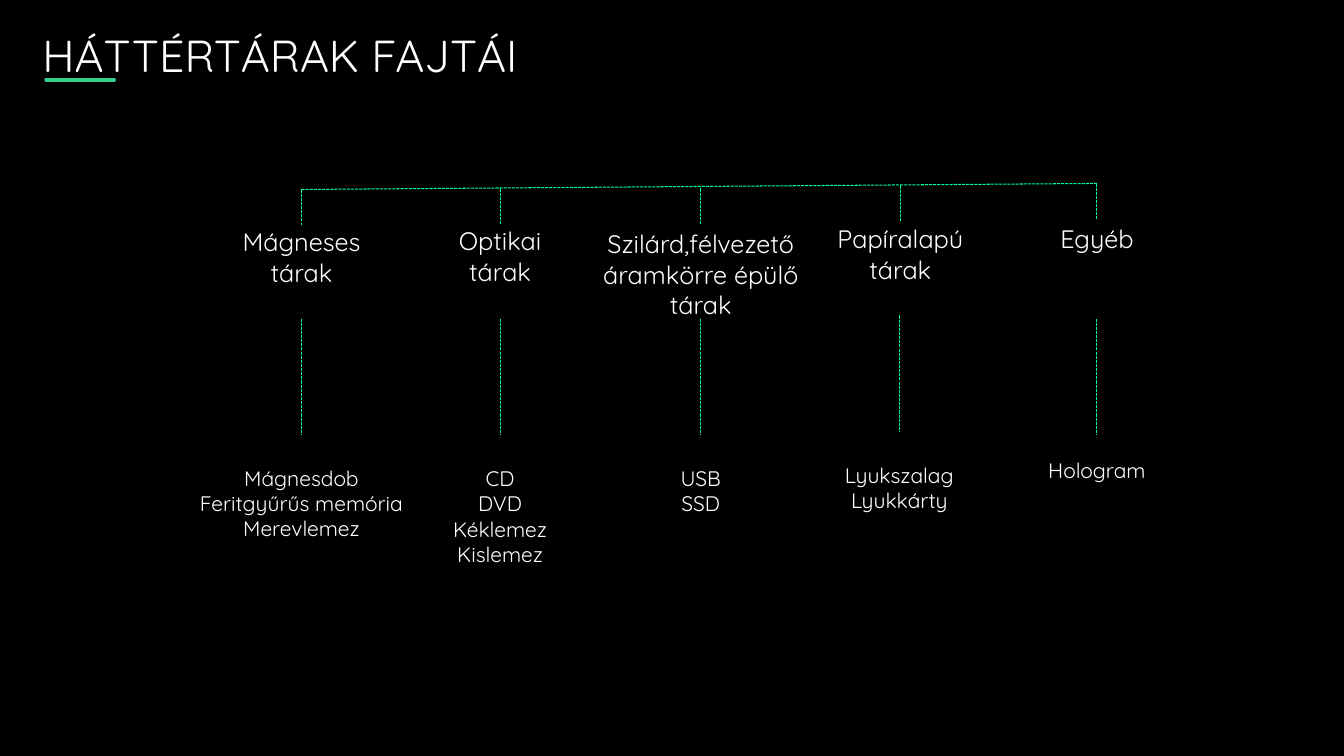
"""Build a slide with a tree of the kinds of background storage."""
from dataclasses import dataclass

from pptx import Presentation
from pptx.dml.color import RGBColor
from pptx.enum.dml import MSO_LINE
from pptx.enum.shapes import MSO_CONNECTOR
from pptx.enum.text import MSO_ANCHOR, MSO_AUTO_SIZE, PP_ALIGN
from pptx.oxml.ns import qn
from pptx.shapes.connector import Connector
from pptx.text.text import TextFrame
from pptx.util import Inches, Pt

STRAIGHT = MSO_CONNECTOR.STRAIGHT
SYS_DASH = MSO_LINE.SQUARE_DOT
MIDDLE, TOP = MSO_ANCHOR.MIDDLE, MSO_ANCHOR.TOP
NO_FIT, GROW = MSO_AUTO_SIZE.NONE, MSO_AUTO_SIZE.SHAPE_TO_FIT_TEXT
LEFT, CENTER = PP_ALIGN.LEFT, PP_ALIGN.CENTER

FONT = "Quicksand"
BLACK, WHITE = "000000", "FFFFFF"
BRANCH_GREEN, UNDERLINE_GREEN = "00FF99", "37D18B"
DROP_LENGTH, STEM_LENGTH = 0.35, 1.16


@dataclass(frozen=True)
class TextBlock:
    text: str
    top: float
    width: float
    height: float


@dataclass(frozen=True)
class Category:
    center: float
    drop_top: float
    stem_center: float
    stem_top: float
    heading: TextBlock
    examples: TextBlock


CATEGORIES = (
    Category(2.99, 1.88, 2.99, 3.16,
             TextBlock("Mágneses tárak", 2.2, 1.47, 0.71),
             TextBlock("Mágnesdob\nFeritgyűrűs memória\nMerevlemez", 4.57, 2.64, 0.86)),
    Category(4.96, 1.87, 4.96, 3.16,
             TextBlock("Optikai tárak", 2.19, 1.47, 0.71),
             TextBlock("CD\nDVD\nKéklemez\nKislemez", 4.57, 2.64, 1.11)),
    Category(6.95, 1.87, 6.95, 3.16,
             TextBlock("Szilárd,félvezető áramkörre épülő tárak", 2.22, 2.17, 1.01),
             TextBlock("USB\nSSD", 4.57, 1.56, 0.61)),
    Category(8.93, 1.84, 8.92, 3.13,
             TextBlock("Papíralapú tárak", 2.17, 1.54, 0.71),
             TextBlock("Lyukszalag\nLyukkárty", 4.54, 1.56, 0.61)),
    Category(10.88, 1.82, 10.88, 3.16,
             TextBlock("Egyéb", 2.17, 1.47, 0.4),
             TextBlock("Hologram", 4.49, 1.56, 0.35)),
)


def color(hex_value: str) -> RGBColor:
    return RGBColor.from_string(hex_value)


def write(frame: TextFrame, text: str, size: float, align: PP_ALIGN) -> None:
    frame.text = text
    frame.word_wrap = True
    for paragraph in frame.paragraphs:
        paragraph.alignment = align
        for run in paragraph.runs:
            run.font.name = FONT
            run.font.size = Pt(size)
            run.font.color.rgb = color(WHITE)


def draw_line(shapes, start: tuple[float, float], end: tuple[float, float],
              hex_value: str, width: float) -> Connector:
    line = shapes.add_connector(STRAIGHT, *map(Inches, start + end))
    line.line.color.rgb = color(hex_value)
    line.line.width = Pt(width)
    properties = line.element.spPr
    properties.append(properties.makeelement(qn("a:effectLst"), {}))
    return line


def draw_branch(shapes, start: tuple[float, float], end: tuple[float, float]) -> None:
    branch = draw_line(shapes, start, end, BRANCH_GREEN, 0.75)
    branch.line.dash_style = SYS_DASH


def draw_text(shapes, block: TextBlock, center: float, size: float) -> None:
    left = center - block.width / 2
    box = shapes.add_textbox(*map(Inches, (left, block.top, block.width, block.height)))
    write(box.text_frame, block.text, size, CENTER)
    box.text_frame.vertical_anchor = TOP
    box.text_frame.auto_size = GROW


def draw_category(shapes, category: Category) -> None:
    x, y = category.center, category.drop_top
    draw_branch(shapes, (x, y), (x, y + DROP_LENGTH))
    x, y = category.stem_center, category.stem_top
    draw_branch(shapes, (x, y), (x, y + STEM_LENGTH))
    draw_text(shapes, category.heading, category.center, 18)
    draw_text(shapes, category.examples, category.stem_center, 15)


def draw_title(slide) -> None:
    title = slide.shapes.title
    title.left, title.top = Inches(0.32), Inches(-0.5)
    title.width, title.height = Inches(10.83), Inches(2.08)
    write(title.text_frame, "HÁTTÉRTÁRAK FAJTÁI", 32, LEFT)
    title.text_frame.vertical_anchor = MIDDLE
    title.text_frame.auto_size = NO_FIT
    underline = draw_line(slide.shapes, (0.46, 0.79), (1.13, 0.79), UNDERLINE_GREEN, 3)
    underline.element.spPr.find(qn("a:ln")).set("cap", "rnd")


def main() -> None:
    presentation = Presentation()
    presentation.slide_width = Inches(13.33)
    presentation.slide_height = Inches(7.5)
    slide = presentation.slides.add_slide(presentation.slide_layouts.get_by_name("Title Only"))
    slide.background.fill.solid()
    slide.background.fill.fore_color.rgb = color(BLACK)
    draw_title(slide)
    tree = slide.shapes.add_group_shape().shapes
    first, last = CATEGORIES[0], CATEGORIES[-1]
    draw_branch(tree, (first.center, first.drop_top), (last.center, last.drop_top))
    for category in CATEGORIES:
        draw_category(tree, category)
    presentation.save("out.pptx")


if __name__ == "__main__":
    main()
